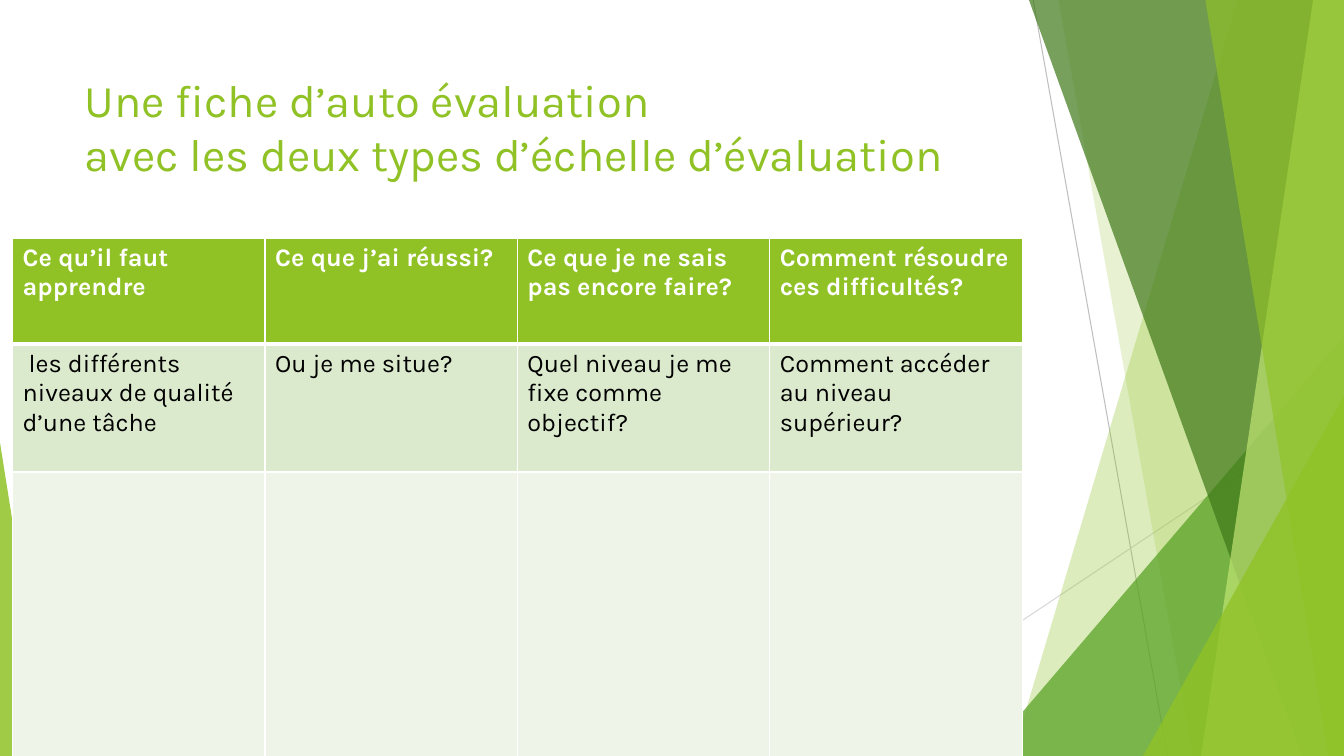
from dataclasses import dataclass

from lxml import etree
from pptx import Presentation
from pptx import util as u
from pptx.dml.color import RGBColor
from pptx.enum import shapes, text
from pptx.oxml import ns

WIDE, HIGH = 960, 540
FONT = "Karla"
HUES = {
    "white": "FFFFFF", "black": "000000", "lime": "90C226",
    "green": "54A021", "dark": "3F7819", "pale": "C0E474",
    "gray": "BFBFBF", "silver": "D9D9D9", "mint": "DBE9CD", "mist": "EEF4E8",
}


@dataclass
class Ray:
    start: tuple[float, float]
    end: tuple[float, float]
    hue: str


@dataclass
class Shard:
    """Band from the right edge to a slanted side."""
    top: float
    base: float
    hue: str
    alpha: int


@dataclass
class Wedge:
    """Triangle on the bottom edge, with its peak at 0 (left) or 1 (right)."""
    left: float
    top: float
    width: float
    peak: float
    hue: str
    alpha: int


@dataclass
class Row:
    height: float
    fill: str
    ink: str
    bold: bool
    edge: float
    cells: list[str]


RAYS = [
    Ray((738, 0), (834, HIGH), "gray"),
    Ray((WIDE, 290), (585, HIGH), "silver"),
]
FACETS = [
    Shard(884, 723, "lime", 30),
    Shard(756, 852, "lime", 20),
    Wedge(703.5, 240, 256.5, 1, "green", 72),
    Shard(735, 929.5, "dark", 70),
    Shard(938, 858, "pale", 70),
    Shard(861, 949, "lime", 65),
    Wedge(816.5, 283, 143.5, 1, "lime", 80),
    Wedge(0, 316, 35.5, 0, "lime", 85),
]
ROWS = [
    Row(75.6, "lime", "white", True, 3, [
        "Ce qu’il faut apprendre", "Ce que j’ai réussi?",
        "Ce que je ne sais pas encore faire?",
        "Comment résoudre ces difficultés?"]),
    Row(91.6, "mint", "black", False, 1, [
        " les différents niveaux de qualité d’une tâche",
        "Ou je me situe?", "Quel niveau je me fixe comme objectif?",
        "Comment accéder au niveau supérieur?"]),
    Row(286.6, "mist", "black", False, 1, [""] * 4),
]


def tint(name: str) -> RGBColor:
    return RGBColor.from_string(HUES[name])


def paint(shape, hue: str, alpha: int) -> None:
    shape.shadow.inherit = False
    shape.line.fill.background()
    shape.fill.solid()
    shape.fill.fore_color.rgb = tint(hue)
    clr = shape.fill._xPr.find(".//" + ns.qn("a:srgbClr"))
    etree.SubElement(clr, ns.qn("a:alpha"), val=str(alpha * 1000))


def style(frame, size: float, hue: str, bold: bool = False) -> None:
    for para in frame.paragraphs:
        for run in para.runs:
            run.font.name = FONT
            run.font.size = u.Pt(size)
            run.font.bold = bold
            run.font.color.rgb = tint(hue)


def draw_ray(slide, ray: Ray) -> None:
    ends = [u.Pt(n) for n in ray.start + ray.end]
    line = slide.shapes.add_connector(shapes.MSO_CONNECTOR.STRAIGHT, *ends)
    line.line.width = u.Pt(0.75)
    line.line.color.rgb = tint(ray.hue)
    etree.SubElement(line._element.spPr, ns.qn("a:effectLst"))


def draw_facet(slide, facet: Shard | Wedge) -> None:
    if isinstance(facet, Shard):
        pen = slide.shapes.build_freeform(facet.top, 0, scale=u.Pt(1))
        pen.add_line_segments([(WIDE, 0), (WIDE, HIGH), (facet.base, HIGH)])
        shape = pen.convert_to_shape()
    else:
        shape = slide.shapes.add_shape(
            shapes.MSO_SHAPE.ISOSCELES_TRIANGLE, u.Pt(facet.left),
            u.Pt(facet.top), u.Pt(facet.width), u.Pt(HIGH - facet.top))
        shape.adjustments[0] = facet.peak
    paint(shape, facet.hue, facet.alpha)


def draw_edges(cell, base: float) -> None:
    props = cell._tc.get_or_add_tcPr()
    sides = {"lnL": 1, "lnR": 1, "lnT": 1, "lnB": base}
    for spot, (side, width) in enumerate(sides.items()):
        line = etree.Element(ns.qn("a:" + side), w=str(u.Pt(width)))
        fill = etree.SubElement(line, ns.qn("a:solidFill"))
        etree.SubElement(fill, ns.qn("a:srgbClr"), val=HUES["white"])
        props.insert(spot, line)


def draw_title(slide) -> None:
    box = slide.shapes.add_textbox(
        u.Pt(53.3), u.Pt(48), u.Pt(677), u.Pt(104))
    frame = box.text_frame
    frame.word_wrap = True
    frame.vertical_anchor = text.MSO_ANCHOR.TOP
    frame.text = ("Une fiche d’auto évaluation\v"
                  "avec les deux types d’échelle d’évaluation")
    style(frame, 32.4, "lime")


def draw_table(slide, rows: list[Row]) -> None:
    count = len(rows[0].cells)
    table = slide.shapes.add_table(
        len(rows), count, u.Pt(9), u.Pt(170), u.Pt(180.3 * count),
        u.Pt(sum(row.height for row in rows))).table
    for r, row in enumerate(rows):
        table.rows[r].height = u.Pt(row.height)
        # The next row's top edge matches this row's base
        for c, words in enumerate(row.cells):
            cell = table.cell(r, c)
            cell.text_frame.text = words
            style(cell.text_frame, 18, row.ink, row.bold)
            cell.fill.solid()
            cell.fill.fore_color.rgb = tint(row.fill)
            draw_edges(cell, row.edge)


def main() -> None:
    deck = Presentation()
    deck.slide_width, deck.slide_height = u.Pt(WIDE), u.Pt(HIGH)
    slide = deck.slides.add_slide(deck.slide_layouts[6])
    # Backdrop
    for ray in RAYS:
        draw_ray(slide, ray)
    for facet in FACETS:
        draw_facet(slide, facet)
    # Content
    draw_title(slide)
    draw_table(slide, ROWS)
    deck.save("out.pptx")


if __name__ == "__main__":
    main()
